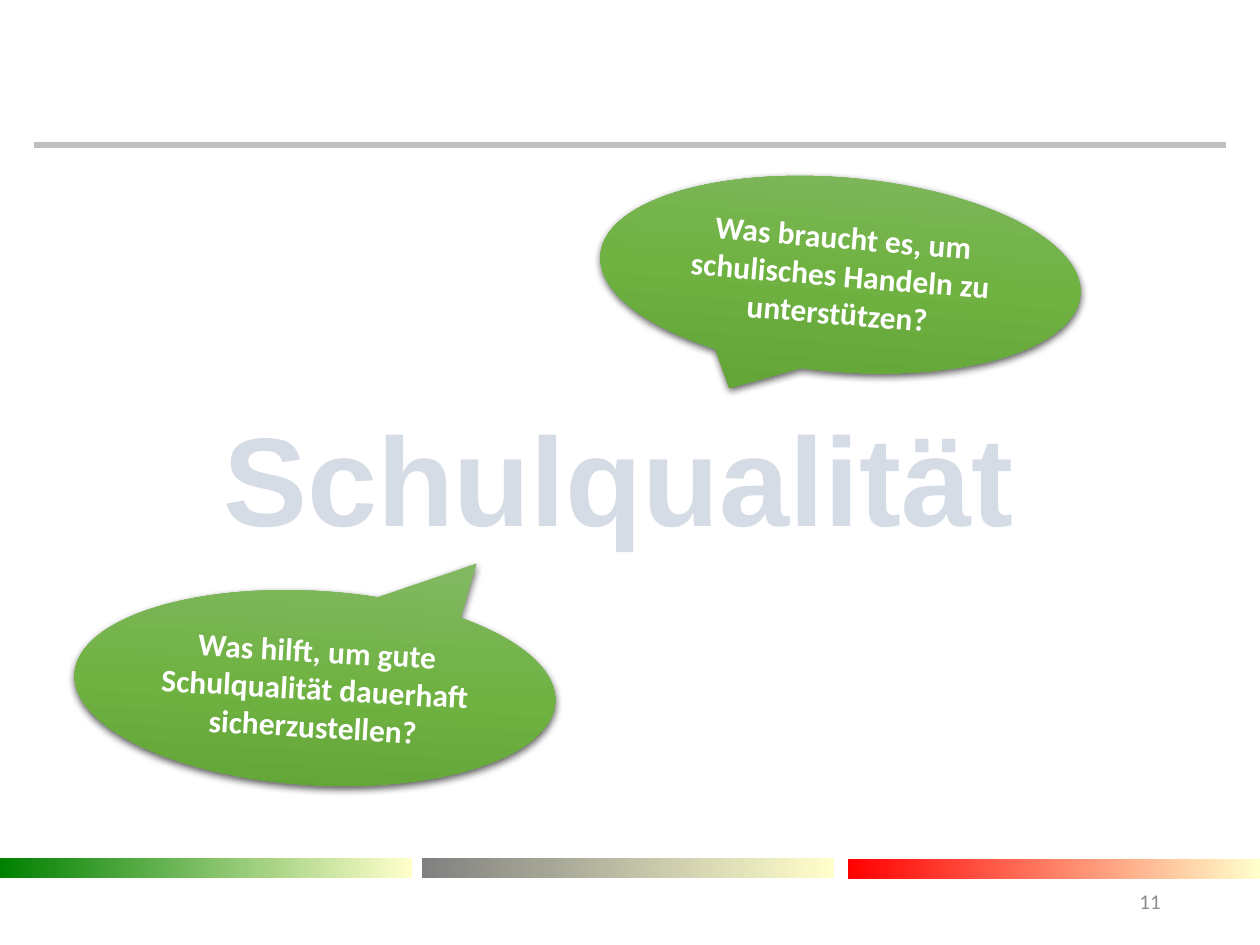
"""Build the slide with two question bubbles around the word Schulqualität."""
from lxml import etree
from pptx import Presentation
from pptx import util as u
from pptx.dml import color as c
from pptx.enum import shapes, text
from pptx.oxml import ns

COLORS = {
    "rule": "C0C0C0",
    "green": "008000",
    "gray": "808080",
    "red": "FF0000",
    "cream": "FFFFCC",
    "bubble_top": "81B861",
    "bubble_middle": "6FB242",
    "bubble_bottom": "62A336",
    "shadow": "000000",
    "white": "FFFFFF",
    "number": "8C8C8C",
    "headline": "D6DCE5",
}
BUBBLE_FONT = {"name": "Calibri", "size": u.Pt(18), "bold": True}
NUMBER_FONT = {"name": "Calibri", "size": u.Pt(12)}
HEADLINE_FONT = {"name": "Arial", "size": u.Pt(72), "bold": True}


def rgb(name):
    """Return the named colour."""
    return c.RGBColor.from_string(COLORS[name])


def add_element(parent, tag, **attributes):
    """Append a DrawingML element to the parent."""
    values = {key: str(value) for key, value in attributes.items()}
    return etree.SubElement(parent, ns.qn(tag), values)


def fill_gradient(shape, names, angle):
    """Fill the shape with evenly spaced stops and no outline."""
    shape.fill.gradient()
    shape.fill.gradient_angle = angle
    stops = shape._element.spPr.find(".//" + ns.qn("a:gsLst"))
    for stop in list(stops):
        stops.remove(stop)
    for index, name in enumerate(names):
        stop = add_element(stops, "a:gs", pos=100000 * index // (len(names) - 1))
        add_element(stop, "a:srgbClr", val=COLORS[name])
    shape.line.fill.background()
    shape.shadow.inherit = False


def write_text(shape, words, formats, color, align, wrap=True):
    """Write one formatted paragraph, centred vertically in the shape."""
    frame = shape.text_frame
    frame.word_wrap = wrap
    frame.vertical_anchor = text.MSO_ANCHOR.MIDDLE
    para = frame.paragraphs[0]
    para.alignment = align
    span = para.add_run()
    span.text = words
    for name, value in formats.items():
        setattr(span.font, name, value)
    span.font.color.rgb = rgb(color)


def add_rule(page):
    """Draw the line below the title area."""
    rule = page.shapes.add_connector(
        shapes.MSO_CONNECTOR.STRAIGHT,
        u.Inches(0.27), u.Inches(1.15), u.Inches(9.73), u.Inches(1.15))
    rule.line.color.rgb = rgb("rule")
    rule.line.width = u.Pt(3)
    add_element(rule._element.spPr, "a:effectLst")


def add_bar(page, left, top, color):
    """Draw a footer bar that fades to cream."""
    bar = page.shapes.add_shape(
        shapes.MSO_SHAPE.RECTANGLE,
        u.Inches(left), u.Inches(top), u.Inches(3.27), u.Inches(0.16))
    fill_gradient(bar, (color, "cream"), 0)


def add_bubble(page, left, top, rotation, tail, words):
    """Draw a tilted speech bubble with a soft shadow."""
    bubble = page.shapes.add_shape(
        shapes.MSO_SHAPE.OVAL_CALLOUT,
        u.Inches(left), u.Inches(top), u.Inches(3.82), u.Inches(1.54))
    bubble.rotation = rotation
    for index, value in enumerate(tail):
        bubble.adjustments[index] = value
    fill_gradient(bubble, ("bubble_top", "bubble_middle", "bubble_bottom"), 270)
    effects = bubble._element.spPr.find(ns.qn("a:effectLst"))
    shadow = add_element(effects, "a:outerShdw", blurRad=u.Pt(4.5), dist=u.Pt(1.5),
                         dir=5400000, algn="ctr", rotWithShape=0)
    tint = add_element(shadow, "a:srgbClr", val=COLORS["shadow"])
    add_element(tint, "a:alpha", val=63000)
    write_text(bubble, words, BUBBLE_FONT, "white", text.PP_ALIGN.CENTER)


def add_label(page, area, *content, **options):
    """Add a text box in the given area."""
    box = page.shapes.add_textbox(*map(u.Inches, area))
    write_text(box, *content, **options)
    return box


def main():
    """Build and save the deck."""
    deck = Presentation()
    deck.slide_width, deck.slide_height = u.Inches(10), u.Inches(7.5)
    page = deck.slides.add_slide(deck.slide_layouts[6])
    add_rule(page)
    for left, top, color in ((6.73, 6.82, "red"), (0, 6.81, "green"), (3.35, 6.81, "gray")):
        add_bar(page, left, top, color)
    add_bubble(page, 4.76, 1.41, 4.8, (-0.21, 0.63),
               "Was braucht es, um schulisches Handeln zu unterstützen?")
    add_bubble(page, 0.59, 4.69, 3.4, (0.32, -0.69),
               "Was hilft, um gute Schulqualität dauerhaft sicherzustellen?")
    add_label(page, (7.06, 6.95, 2.25, 0.4), "11", NUMBER_FONT, "number",
              text.PP_ALIGN.RIGHT)
    headline = add_label(page, (1.64, 3.12, 6.54, 1.31), "Schulqualität", HEADLINE_FONT,
                         "headline", text.PP_ALIGN.CENTER, wrap=False)
    headline.text_frame.auto_size = text.MSO_AUTO_SIZE.SHAPE_TO_FIT_TEXT
    deck.save("out.pptx")


if __name__ == "__main__":
    main()
